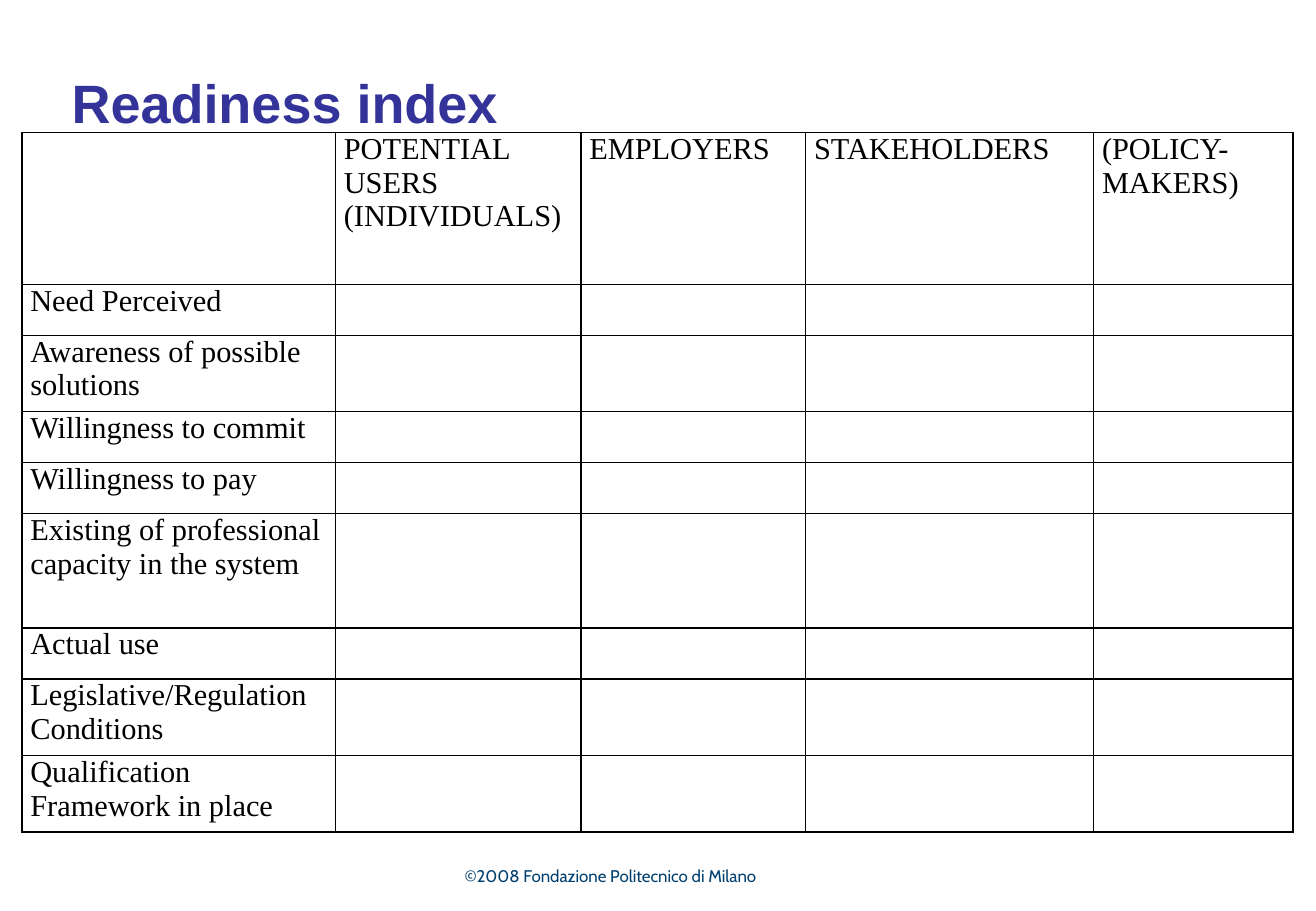
from dataclasses import dataclass

from lxml import etree
from pptx import Presentation
from pptx import util as u
from pptx.dml import color
from pptx.enum import text
from pptx.oxml import ns


@dataclass(frozen=True)
class Theme:
    title_color: str = "333399"
    footer_color: str = "003F6E"
    ink: str = "000000"
    paper: str = "FFFFFF"
    title_size: int = 32
    table_size: int = 18
    footer_size: int = 10
    border_width: int = 1


THEME = Theme()
AUDIENCES = ["POTENTIAL USERS (INDIVIDUALS)", "EMPLOYERS", "STAKEHOLDERS", "(POLICY-MAKERS)"]
COLUMN_WIDTHS = [2.58, 2.02, 1.85, 2.37, 1.64]
HEADER_HEIGHT = 1.25
CRITERIA = [
    ("Need Perceived", 0.42),
    ("Awareness of possible solutions", 0.63),
    ("Willingness to commit", 0.42),
    ("Willingness to pay", 0.42),
    ("Existing of professional capacity in the system", 0.94),
    ("Actual use", 0.42),
    ("Legislative/Regulation Conditions", 0.63),
    ("Qualification Framework in place", 0.63),
]


def write(frame, words, *, size, font, ink, bold=False, align=text.PP_ALIGN.LEFT):
    """Fill a text frame with one formatted paragraph."""
    paragraph = frame.paragraphs[0]
    paragraph.text = words
    paragraph.alignment = align
    paragraph.font.size = u.Pt(size)
    paragraph.font.name = font
    paragraph.font.bold = bold
    paragraph.font.color.rgb = color.RGBColor.from_string(ink)


def add_label(slide, box, words, top_inset=0.05, **style):
    label = slide.shapes.add_textbox(*map(u.Inches, box))
    frame = label.text_frame
    frame.word_wrap = True
    frame.margin_top = u.Inches(top_inset)
    write(frame, words, **style)


def set_borders(cell):
    properties = cell._tc.get_or_add_tcPr()
    for side in ("lnL", "lnR", "lnT", "lnB"):
        line = etree.SubElement(properties, ns.qn(f"a:{side}"), w=str(u.Pt(THEME.border_width)))
        fill = etree.SubElement(line, ns.qn("a:solidFill"))
        etree.SubElement(fill, ns.qn("a:srgbClr"), val=THEME.ink)


def add_title(slide, box):
    add_label(slide, box, "Readiness index", top_inset=0.1, size=THEME.title_size,
              font="Arial", ink=THEME.title_color, bold=True)


def add_readiness_table(slide, box):
    rows = [("", *AUDIENCES)] + [(name,) + ("",) * len(AUDIENCES) for name, _ in CRITERIA]
    heights = [HEADER_HEIGHT] + [height for _, height in CRITERIA]
    table = slide.shapes.add_table(len(rows), len(COLUMN_WIDTHS), *map(u.Inches, box)).table
    table.horz_banding = False

    for column, width in zip(table.columns, COLUMN_WIDTHS):
        column.width = u.Inches(width)
    for row, height, entries in zip(table.rows, heights, rows):
        row.height = u.Inches(height)
        for cell, entry in zip(row.cells, entries):
            cell.margin_left = cell.margin_right = u.Inches(0.07)
            cell.margin_top = cell.margin_bottom = 0
            set_borders(cell)
            cell.fill.solid()
            cell.fill.fore_color.rgb = color.RGBColor.from_string(THEME.paper)
            write(cell.text_frame, entry, size=THEME.table_size,
                  font="Times New Roman", ink=THEME.ink)


def add_footer(slide, box):
    add_label(slide, box, "©2008 Fondazione Politecnico di Milano", size=THEME.footer_size,
              font="Cabin", ink=THEME.footer_color, align=text.PP_ALIGN.RIGHT)


def main():
    deck = Presentation()
    deck.slide_width, deck.slide_height = u.Inches(10.83), u.Inches(7.5)
    slide = deck.slides.add_slide(deck.slide_layouts[6])

    # Title, table, footer from top to bottom
    add_title(slide, (0.49, 0.47, 9.75, 0.55))
    add_readiness_table(slide, (0.18, 1.09, 10.46, 5.76))
    add_footer(slide, (3.31, 7.08, 3.01, 0.42))

    deck.save("out.pptx")


if __name__ == "__main__":
    main()
